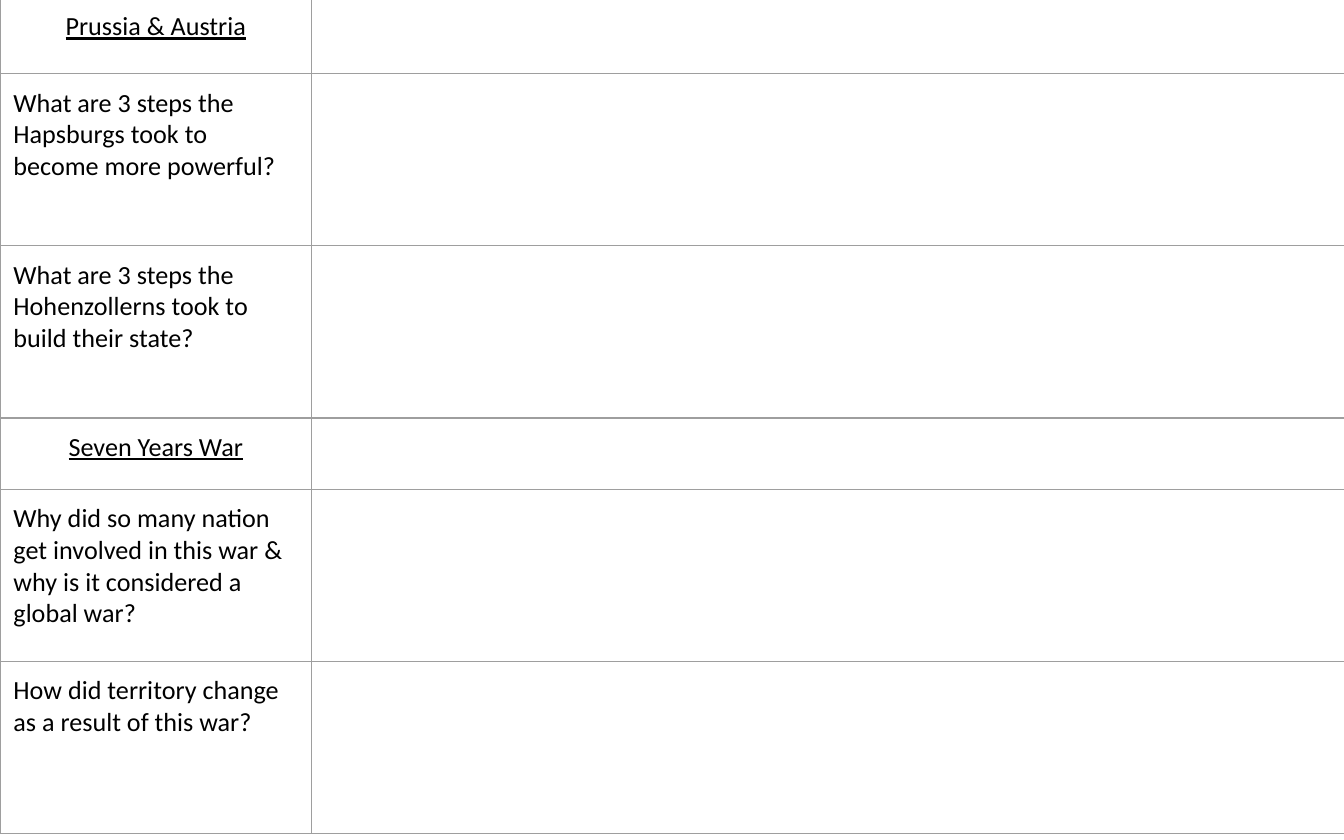
"""Build a two-column study guide on Prussia, Austria and the Seven Years War."""
from pptx import Presentation, util as u
from pptx.dml.color import RGBColor
from pptx.enum import text
from pptx.oxml import parse_xml
from pptx.oxml.ns import nsdecls

HUES = {"ink": "000000", "rule": "9E9E9E"}
HEAD, ASK = True, False
ROWS = [
    (HEAD, 0.57, "Prussia & Austria"),
    (ASK, 1.28, "What are 3 steps the Hapsburgs took to become more powerful?"),
    (ASK, 1.28, "What are 3 steps the Hohenzollerns took to build their state?"),
    (HEAD, 0.53, "Seven Years War"),
    (ASK, 1.28, "Why did so many nation get involved in this war & why is it considered a global war?"),
    (ASK, 1.28, "How did territory change as a result of this war?"),
]
WIDTHS = [2.32, 7.7]


class Guide:
    """Hold the style and the current slide."""

    def __init__(self, slide, font="Calibri", size=14, pad=0.1, line=0.75):
        self.slide, self.font, self.size = slide, font, size
        self.pad, self.line = u.Inches(pad), u.Pt(line)

    def frame(self, cell):
        """Give a cell its margins, borders and clear fill."""
        cell.margin_left = cell.margin_right = self.pad
        cell.margin_top = cell.margin_bottom = self.pad
        props = cell._tc.get_or_add_tcPr()
        for side in "LRTB":
            props.append(parse_xml(
                f'<a:ln{side} {nsdecls("a")} w="{self.line}"><a:solidFill>'
                f'<a:srgbClr val="{HUES["rule"]}"/></a:solidFill></a:ln{side}>'))
        cell.fill.background()

    def label(self, cell, words, head):
        """Put a heading or a question in a cell."""
        cell.text_frame.text = words
        para = cell.text_frame.paragraphs[0]
        para.alignment = text.PP_ALIGN.CENTER if head else text.PP_ALIGN.LEFT
        font = para.runs[0].font
        font.name, font.size, font.underline = self.font, u.Pt(self.size), head
        font.color.rgb = RGBColor.from_string(HUES["ink"])

    def table(self, left, top, widths, rows):
        """Add the table of questions with room for answers."""
        high = sum(tall for _, tall, _ in rows)
        grid = self.slide.shapes.add_table(
            len(rows), len(widths), u.Inches(left), u.Inches(top),
            u.Inches(sum(widths)), u.Inches(high)).table
        grid.first_row = grid.horz_banding = False
        for col, wide in zip(grid.columns, widths):
            col.width = u.Inches(wide)
        for row, (head, tall, words) in zip(grid.rows, rows):
            row.height = u.Inches(tall)
            for cell in row.cells:
                self.frame(cell)
            self.label(grid.cell(rows.index((head, tall, words)), 0), words, head)


def main():
    """Make the deck and save it."""
    deck = Presentation()
    deck.slide_width, deck.slide_height = u.Inches(10), u.Inches(6.25)
    guide = Guide(deck.slides.add_slide(deck.slide_layouts[6]))
    guide.table(0, -0.02, WIDTHS, ROWS)
    deck.save("out.pptx")


if __name__ == "__main__":
    main()
